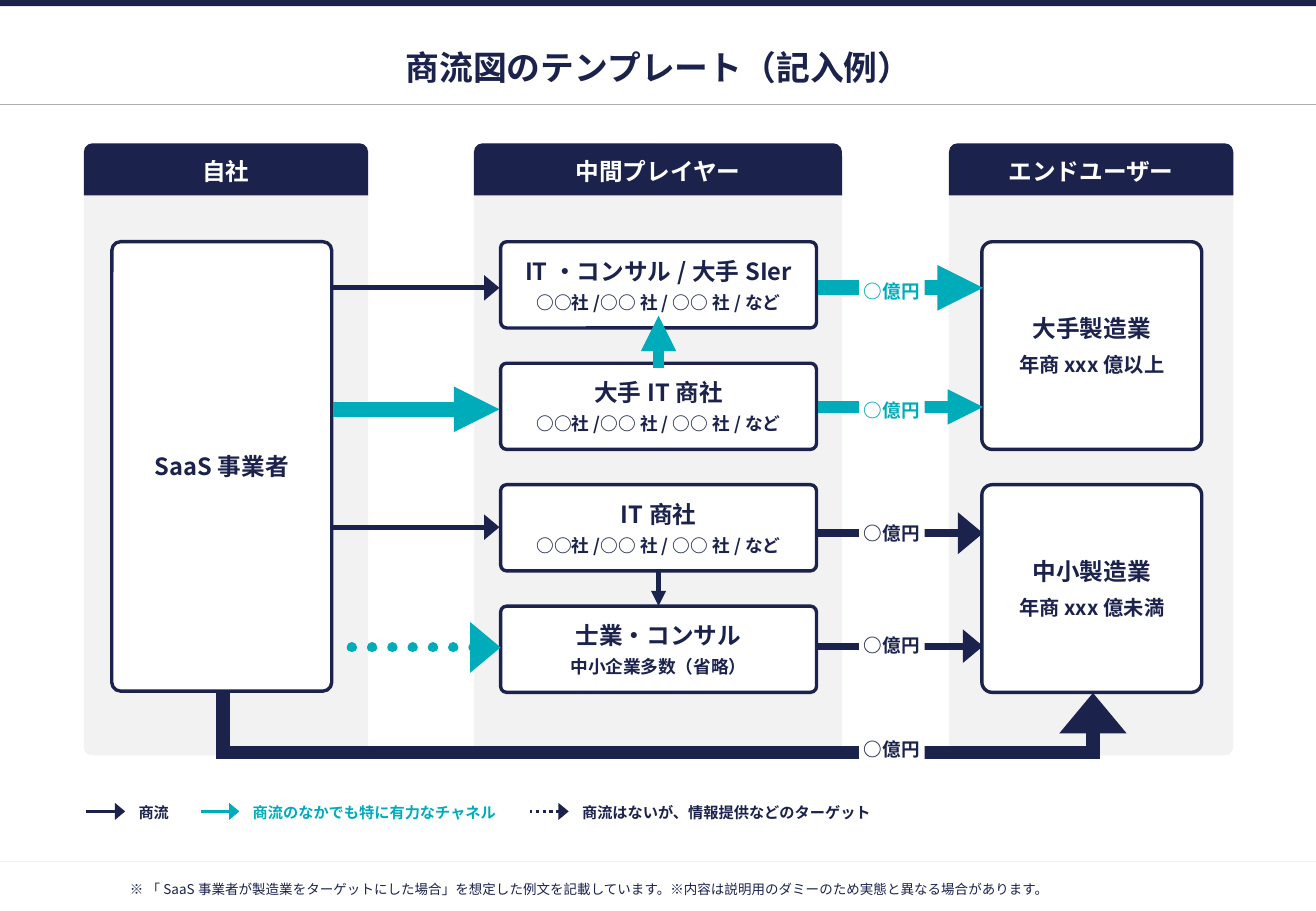
from lxml import etree
from pptx import Presentation
from pptx.dml.color import RGBColor
from pptx.enum.dml import MSO_LINE
from pptx.enum.shapes import MSO_CONNECTOR, MSO_SHAPE
from pptx.enum.text import MSO_ANCHOR, MSO_AUTO_SIZE, PP_ALIGN
from pptx.oxml.ns import qn
from pptx.util import Inches, Pt

RECT = MSO_SHAPE.RECTANGLE
ROUNDED = MSO_SHAPE.ROUNDED_RECTANGLE
TOP_ROUNDED = MSO_SHAPE.ROUND_2_SAME_RECTANGLE
STRAIGHT, ELBOW = MSO_CONNECTOR.STRAIGHT, MSO_CONNECTOR.ELBOW
CENTER, LEFT = PP_ALIGN.CENTER, PP_ALIGN.LEFT
MIDDLE, TOP = MSO_ANCHOR.MIDDLE, MSO_ANCHOR.TOP
SHRINK_BOX = MSO_AUTO_SIZE.SHAPE_TO_FIT_TEXT
DOTTED = MSO_LINE.ROUND_DOT
FONT = "Noto Sans CJK JP"
COLORS = {
    "navy": "1B224C",
    "teal": "00ACBA",
    "panel": "F2F2F2",
    "rule": "AFAFAF",
    "white": "FFFFFF",
}
RGB = {name: RGBColor.from_string(value) for name, value in COLORS.items()}

presentation = Presentation()
presentation.slide_width = Inches(10.83)
presentation.slide_height = Inches(7.5)
slide = presentation.slides.add_slide(presentation.slide_layouts[6])


def add_box(kind, box, fill=None, lines=(), color="navy", bold=True,
            align=CENTER, anchor=MIDDLE, gap=0, border=None, corner=None):
    """Add a shape, or a text box when kind is None; lines are (text, size)."""
    box = [Inches(value) for value in box]
    if kind is None:
        shape = slide.shapes.add_textbox(*box)
    else:
        shape = slide.shapes.add_shape(kind, *box)
        shape.shadow.inherit = False
        shape.fill.solid()
        shape.fill.fore_color.rgb = RGB[fill]
        if border:
            shape.line.color.rgb = RGB[border]
            shape.line.width = Pt(2)
        else:
            shape.line.fill.background()
    if corner:
        shape.adjustments[0] = corner
    frame = shape.text_frame
    frame.word_wrap = True
    frame.vertical_anchor = anchor
    frame.margin_left = frame.margin_right = Inches(0.04)
    frame.margin_top = frame.margin_bottom = Inches(0.04)
    for index, (text, size) in enumerate(lines):
        paragraph = frame.add_paragraph() if index else frame.paragraphs[0]
        paragraph.alignment = align
        paragraph.space_after = Pt(gap)
        run = paragraph.add_run()
        run.text = text
        run.font.name = FONT
        run.font.size = Pt(size)
        run.font.bold = bold
        run.font.color.rgb = RGB[color]
        east_asian = etree.SubElement(run.font._element, qn("a:ea"))
        east_asian.set("typeface", FONT)
    return shape


def add_line(start, end, color, width, head=None, dash=None,
             kind=STRAIGHT, head_end="a:headEnd"):
    """Add a line; head is the arrowhead width ("med" or "lg") at head_end."""
    points = [Inches(value) for value in (*start, *end)]
    connector = slide.shapes.add_connector(kind, *points)
    connector.line.color.rgb = RGB[color]
    connector.line.width = Pt(width)
    if dash:
        connector.line.dash_style = dash
    if head:
        outline = connector.line._get_or_add_ln()
        etree.SubElement(outline, qn("a:miter"), lim="800000")
        etree.SubElement(outline, qn(head_end), type="triangle", w=head, len="med")
    etree.SubElement(connector._element.spPr, qn("a:effectLst"))
    return connector


# Page frame
add_line((0, 7.09), (10.83, 7.09), "panel", 0.75)
add_box(RECT, (0, 0, 10.83, 0.05), "navy")
add_line((0, 0.86), (10.83, 0.86), "rule", 0.75)
add_box(None, (0.69, 0.34, 9.46, 0.42), lines=[("商流図のテンプレート（記入例）", 20)])

# Columns
for heading, left, width in [("自社", 0.69, 2.34), ("中間プレイヤー", 3.9, 3.03),
                             ("エンドユーザー", 7.81, 2.34)]:
    add_box(ROUNDED, (left, 1.18, width, 5.04), "panel", corner=0.03)
    add_box(TOP_ROUNDED, (left, 1.18, width, 0.43), "navy", [(heading, 14)], "white")

# Players
add_box(ROUNDED, (0.92, 1.99, 1.81, 3.7), "white", [("SaaS事業者", 14)],
        gap=6, border="navy", corner=0.04)
companies = "○○社/○○社/ ○○社/など"
middle_players = [("IT・コンサル/大手SIer", companies), ("大手IT商社", companies),
                  ("IT商社", companies), ("士業・コンサル", "中小企業多数（省略）")]
for row, (name, detail) in enumerate(middle_players):
    add_box(ROUNDED, (4.12, 1.99 + row, 2.6, 0.71), "white",
            [(name, 14), (detail, 10.5)], gap=4, border="navy", corner=0.07)
end_users = [("大手製造業", "年商xxx億以上"), ("中小製造業", "年商xxx億未満")]
for row, (name, detail) in enumerate(end_users):
    add_box(ROUNDED, (8.08, 1.99 + 2 * row, 1.81, 1.71), "white",
            [(name, 14), (detail, 12)], gap=6, border="navy", corner=0.05)

# Flows from the company to the middle players
for y, color, width, head in [(2.37, "navy", 3, "lg"), (3.37, "teal", 9, "med"),
                              (4.34, "navy", 3, "lg")]:
    add_line((4.11, y), (2.74, y), color, width, head)
information_flow = add_line((4.12, 5.33), (2.75, 5.33), "teal", 6, "lg", DOTTED)
information_flow.line._get_or_add_ln().set("cap", "rnd")

# Flows between middle players
add_line((5.42, 2.6), (5.42, 3.03), "teal", 7, "med")
add_line((5.42, 4.99), (5.42, 4.7), "navy", 3, "med")

# Direct flow: an elbow turned a quarter, dropping 0.51 in below its ends
direct_flow = add_line((5.42, 2.12), (5.41, 9.28), "navy", 8, "lg",
                       kind=ELBOW, head_end="a:tailEnd")
direct_flow._element.spPr.find(qn("a:xfrm")).set("rot", "16200000")
adjustments = direct_flow._element.spPr.find(qn("a:prstGeom")).find(qn("a:avLst"))
etree.SubElement(adjustments, qn("a:gd"), name="adj1", fmla="val 5100000")

# Flows to the end users, with their amounts
for y, color, width, head in [(2.37, "teal", 9, "med"), (3.35, "teal", 7, "med"),
                              (4.39, "navy", 5, "lg"), (5.32, "navy", 4, "lg")]:
    add_line((8.09, y), (6.73, y), color, width, head)
for top, color in [(2.27, "teal"), (3.25, "teal"), (4.26, "navy"),
                   (5.18, "navy"), (6.04, "navy")]:
    amount = add_box(RECT, (7.07, top, 0.54, 0.26), "white", [("○億円", 11)], color)
    amount.text_frame.word_wrap = False
    amount.text_frame.auto_size = SHRINK_BOX

# Legend
for left, width, label, color, dash in [
        (0.71, 0.39, "商流", "navy", None),
        (1.65, 2.23, "商流のなかでも特に有力なチャネル", "teal", None),
        (4.36, 2.79, "商流はないが、情報提供などのターゲット", "navy", DOTTED)]:
    add_line((left + 0.32, 6.68), (left, 6.68), color, 2, "lg", dash)
    add_box(None, (left + 0.39, 6.57, width, 0.23), lines=[(label, 9)],
            color=color, align=LEFT, anchor=TOP)

# Footnote
footnote = ("※ 「SaaS事業者が製造業をターゲットにした場合」を想定した例文を記載しています。"
            "※内容は説明用のダミーのため実態と異なる場合があります。")
add_box(None, (1.03, 7.21, 8.5, 0.21), lines=[(footnote, 8)],
        bold=False, align=LEFT, anchor=TOP)

presentation.save("out.pptx")
